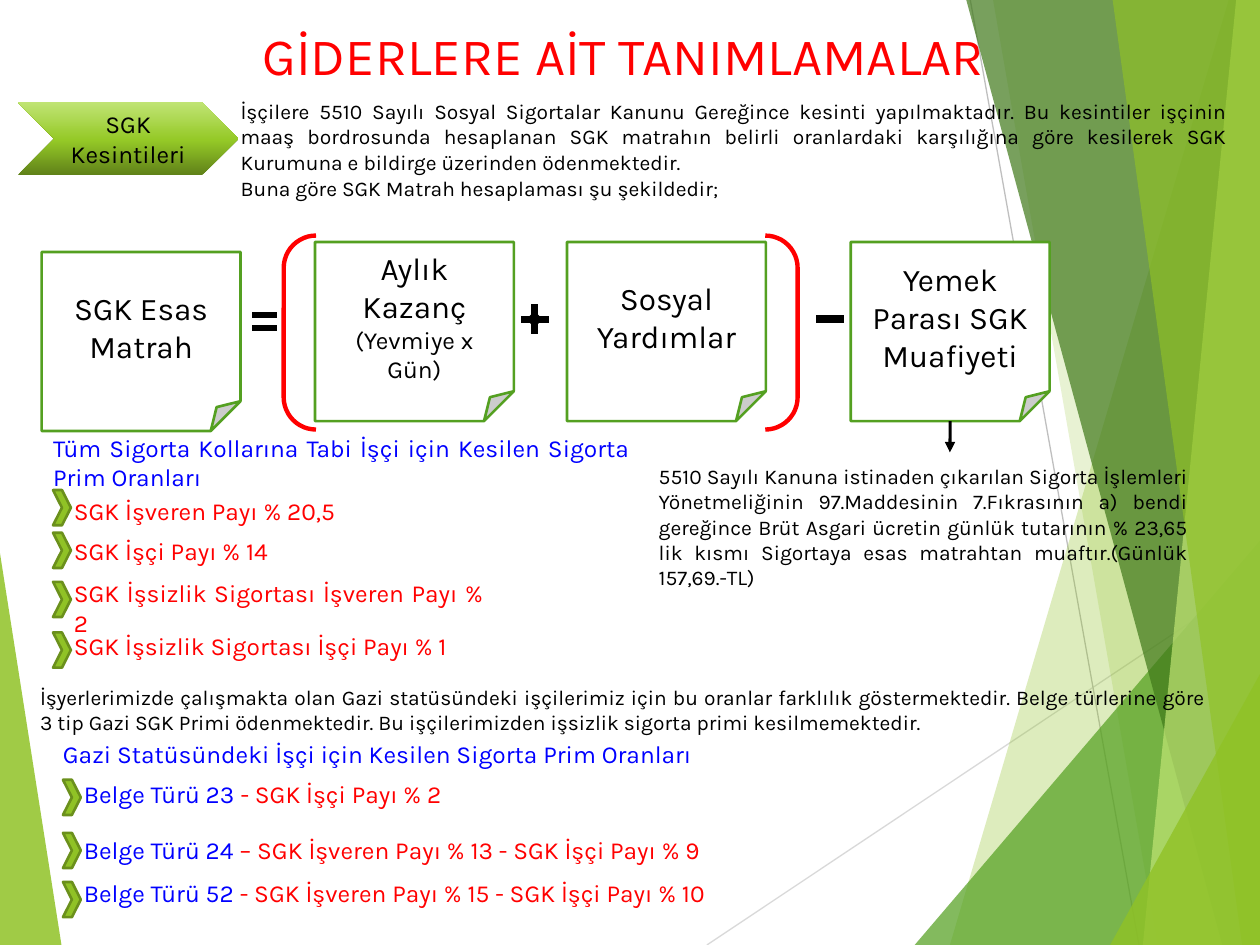
import copy

import lxml.etree
import pptx
import pptx.dml.color
import pptx.enum.dml
import pptx.enum.shapes
import pptx.enum.text
import pptx.oxml.ns
import pptx.util

COLORS = {
    "black": "000000", "white": "FFFFFF", "red": "FF0000", "blue": "0000FF",
    "lime": "90C226", "olive": "6B901C", "green": "54A021", "forest": "3F7819",
    "pale": "C0E474", "moss": "608219", "bright": "95C927",
    "silver": "D9D9D9", "gray": "BFBFBF",
}
WIDTH, HEIGHT = 25.4, 19.05
SHAPES = pptx.enum.shapes.MSO_SHAPE
ALIGN = pptx.enum.text.PP_ALIGN
ANCHOR = pptx.enum.text.MSO_ANCHOR
Cm, Pt = pptx.util.Cm, pptx.util.Pt
qn = pptx.oxml.ns.qn


def rgb(name):
    return pptx.dml.color.RGBColor.from_string(COLORS[name])


def write(paragraph, text, size=14, color="black", align=ALIGN.CENTER, before=0):
    paragraph.alignment = align
    paragraph.space_before = Pt(before)
    run = paragraph.add_run()
    run.text = text
    run.font.name = "Karla"
    run.font.size = Pt(size)
    run.font.color.rgb = rgb(color)


class SlideBuilder:
    def __init__(self, slide):
        self.slide = slide
        self.shapes = slide.shapes

    def trim(self, frame, anchor=ANCHOR.TOP):
        frame.word_wrap = True
        frame.vertical_anchor = anchor
        frame.margin_left = frame.margin_right = frame.margin_bottom = 0
        frame.margin_top = Cm(0.03)

    def title(self, text, left, top, width, height):
        heading = self.shapes.title
        heading.left, heading.top = Cm(left), Cm(top)
        heading.width, heading.height = Cm(width), Cm(height)
        self.trim(heading.text_frame)
        heading.text_frame.auto_size = pptx.enum.text.MSO_AUTO_SIZE.NONE
        write(heading.text_frame.paragraphs[0], text, size=30, color="red", before=1)

    def style(self, shape, fill=None, line=None, weight=1.5):
        shape.shadow.inherit = False
        if fill:
            shape.fill.solid()
            shape.fill.fore_color.rgb = rgb(fill)
        else:
            shape.fill.background()
        if line:
            shape.line.color.rgb = rgb(line)
            shape.line.width = Pt(weight)
        else:
            shape.line.fill.background()

    def shape(self, kind, left, top, width, height, **look):
        shape = self.shapes.add_shape(kind, Cm(left), Cm(top), Cm(width), Cm(height))
        self.style(shape, **look)
        return shape

    def facet(self, points, color, opacity):
        corners = [(Cm(x), Cm(y)) for x, y in points]
        outline = self.shapes.build_freeform(*corners[0])
        outline.add_line_segments(corners[1:], close=True)
        facet = outline.convert_to_shape()
        self.style(facet, fill=color)
        tint = facet.element.spPr.find(".//" + qn("a:srgbClr"))
        lxml.etree.SubElement(tint, qn("a:alpha"), val=str(opacity * 1000))

    def line(self, start, end, color, weight):
        line = self.shapes.add_connector(
            pptx.enum.shapes.MSO_CONNECTOR.STRAIGHT, *map(Cm, start + end))
        line.line.color.rgb = rgb(color)
        line.line.width = Pt(weight)
        lxml.etree.SubElement(line.element.spPr, qn("a:effectLst"))
        return line

    def arrow(self, source, end):
        arrow = self.line((end[0], end[1] - 0.66), end, "black", 1.75)
        arrow.begin_connect(source, 2)
        lxml.etree.SubElement(
            arrow.element.spPr.find(qn("a:ln")), qn("a:tailEnd"), type="triangle")

    def text(self, paragraphs, left, top, width, height, size=12):
        box = self.shapes.add_textbox(Cm(left), Cm(top), Cm(width), Cm(height))
        frame = box.text_frame
        self.trim(frame)
        for index, runs in enumerate(paragraphs):
            paragraph = frame.add_paragraph() if index else frame.paragraphs[0]
            for words, color in runs:
                write(paragraph, words, size=size, color=color,
                      align=ALIGN.JUSTIFY, before=0.5)

    def banner(self, text, left, top, width, height):
        banner = self.shape(SHAPES.CHEVRON, left, top, width, height)
        banner.fill.gradient()
        banner.fill.gradient_angle = 90
        stops = banner.element.spPr.find(".//" + qn("a:gsLst"))
        stops.insert(1, copy.deepcopy(stops[0]))
        shades = [(0, "moss"), (0.48, "bright"), (1, "pale")]
        for stop, (position, color) in zip(banner.fill.gradient_stops, shades):
            stop.position = position
            stop.color.rgb = rgb(color)
        banner.text_frame.vertical_anchor = ANCHOR.MIDDLE
        write(banner.text_frame.paragraphs[0], text)

    def card(self, lines, left, top):
        card = self.shape(SHAPES.FOLDED_CORNER, left, top, 4.01, 3.61,
                          fill="white", line="green")
        frame = card.text_frame
        frame.vertical_anchor = ANCHOR.MIDDLE
        for index, (words, size) in enumerate(lines):
            paragraph = frame.add_paragraph() if index else frame.paragraphs[0]
            write(paragraph, words, size=size)
        return card

    def bullet(self, runs, left, marker_top, text_top, width):
        self.shape(SHAPES.CHEVRON, left, marker_top, 0.36, 0.71,
                   fill="lime", line="olive")
        self.text([runs], left + 0.42, text_top, width, 0.61, size=14)


def draw_background(page):
    top_right, bottom_right = (WIDTH, 0), (WIDTH, HEIGHT)
    page.facet([(0, 11.15), (1.24, HEIGHT), (0, HEIGHT)], "lime", 85)
    page.line((14.25, HEIGHT), (WIDTH, 11.61), "silver", 0.75)
    page.line((19.56, 0), (22.96, HEIGHT), "gray", 0.75)
    facets = [
        ((24.77, 0), 19.15, top_right, "lime", 30),
        ((20.02, 0), 23.34, top_right, "lime", 20),
        ((WIDTH, 10.9), 18.44, None, "green", 72),
        ((19.48, 0), 24.64, top_right, "forest", 70),
        ((24.92, 0), 23.04, top_right, "pale", 70),
        ((22.43, 0), 25.04, top_right, "lime", 65),
        ((WIDTH, 13.59), 22.38, None, "lime", 80),
    ]
    for peak, foot, corner, color, opacity in facets:
        points = [peak, (foot, HEIGHT), bottom_right] + ([corner] if corner else [])
        page.facet(points, color, opacity)


def draw_formula(page):
    page.card([("SGK Esas Matrah", 18)], 0.84, 5.08)
    page.card([("Aylık Kazanç", 18), ("(Yevmiye x Gün)", 14)], 6.35, 4.88)
    page.card([("Sosyal Yardımlar", 18)], 11.43, 4.88)
    exemption = page.card([("Yemek Parası SGK Muafiyeti", 18)], 17.15, 4.88)
    for kind, *place in [(SHAPES.MATH_EQUAL, 4.95, 6.12, 0.76, 0.74),
                         (SHAPES.MATH_PLUS, 10.36, 5.99, 0.84, 0.89),
                         (SHAPES.MATH_MINUS, 16.31, 5.99, 0.84, 0.89)]:
        page.shape(kind, *place, fill="black", line="white")
    page.shape(SHAPES.DOUBLE_BRACKET, 5.72, 4.75, 10.36, 3.91, line="red", weight=2.5)
    page.arrow(exemption, (19.15, 9.12))


def main():
    deck = pptx.Presentation()
    deck.slide_width, deck.slide_height = Cm(WIDTH), Cm(HEIGHT)
    page = SlideBuilder(deck.slides.add_slide(deck.slide_layouts[5]))
    draw_background(page)
    page.title("GİDERLERE AİT TANIMLAMALAR", 1.7, 0.43, 21.74, 1.32)
    page.banner("SGK Kesintileri", 0.36, 2.06, 4.45, 1.47)
    page.text([
        [("İşçilere 5510 Sayılı Sosyal Sigortalar Kanunu Gereğince kesinti yapılmaktadır. Bu kesintiler işçinin maaş bordrosunda hesaplanan SGK matrahın belirli oranlardaki karşılığına göre kesilerek SGK Kurumuna e bildirge üzerinden ödenmektedir.", "black")],
        [("Buna göre SGK Matrah hesaplaması şu şekildedir;", "black")],
    ], 4.85, 1.96, 19.89, 2.08)
    draw_formula(page)
    page.text([[("5510 Sayılı Kanuna istinaden çıkarılan Sigorta İşlemleri Yönetmeliğinin 97.Maddesinin 7.Fıkrasının a) bendi gereğince Brüt Asgari ücretin günlük tutarının % 23,65 lik kısmı Sigortaya esas matrahtan muaftır.(Günlük 157,69.-TL)", "black")]],
              13.28, 9.32, 10.67, 2.59)
    page.text([[("Tüm Sigorta Kollarına Tabi İşçi için Kesilen Sigorta Prim Oranları", "blue")]],
              1.07, 8.69, 11.63, 1.22, size=14)
    for rate, *place in [("SGK İşveren Payı % 20,5", 9.88, 9.96, 9.09),
                         ("SGK İşçi Payı % 14", 10.74, 10.77, 4.45),
                         ("SGK İşsizlik Sigortası İşveren Payı % 2", 11.73, 11.63, 8.26),
                         ("SGK İşsizlik Sigortası İşçi Payı % 1", 12.75, 12.7, 7.62)]:
        page.bullet([(rate, "red")], 1.07, *place)
    page.text([[("İşyerlerimizde çalışmakta olan Gazi statüsündeki işçilerimiz için bu oranlar farklılık göstermektedir. Belge türlerine göre 3 tip Gazi SGK Primi ödenmektedir. Bu işçilerimizden işsizlik sigorta primi kesilmemektedir.", "black")]],
              0.81, 13.77, 23.5, 1.04)
    page.text([[("Gazi Statüsündeki İşçi için Kesilen Sigorta Prim Oranları", "blue")]],
              1.27, 14.86, 12.7, 0.61, size=14)
    for document, rate, *place in [
            ("Belge Türü 23 ", "- SGK İşçi Payı % 2", 15.72, 15.67, 9.09),
            ("Belge Türü 24 ", "– SGK İşveren Payı % 13 - SGK İşçi Payı % 9", 16.79, 16.81, 14.4),
            ("Belge Türü 52", " - SGK İşveren Payı % 15 - SGK İşçi Payı % 10", 17.78, 17.68, 12.7)]:
        page.bullet([(document, "blue"), (rate, "red")], 1.27, *place)
    deck.save("out.pptx")


if __name__ == "__main__":
    main()
